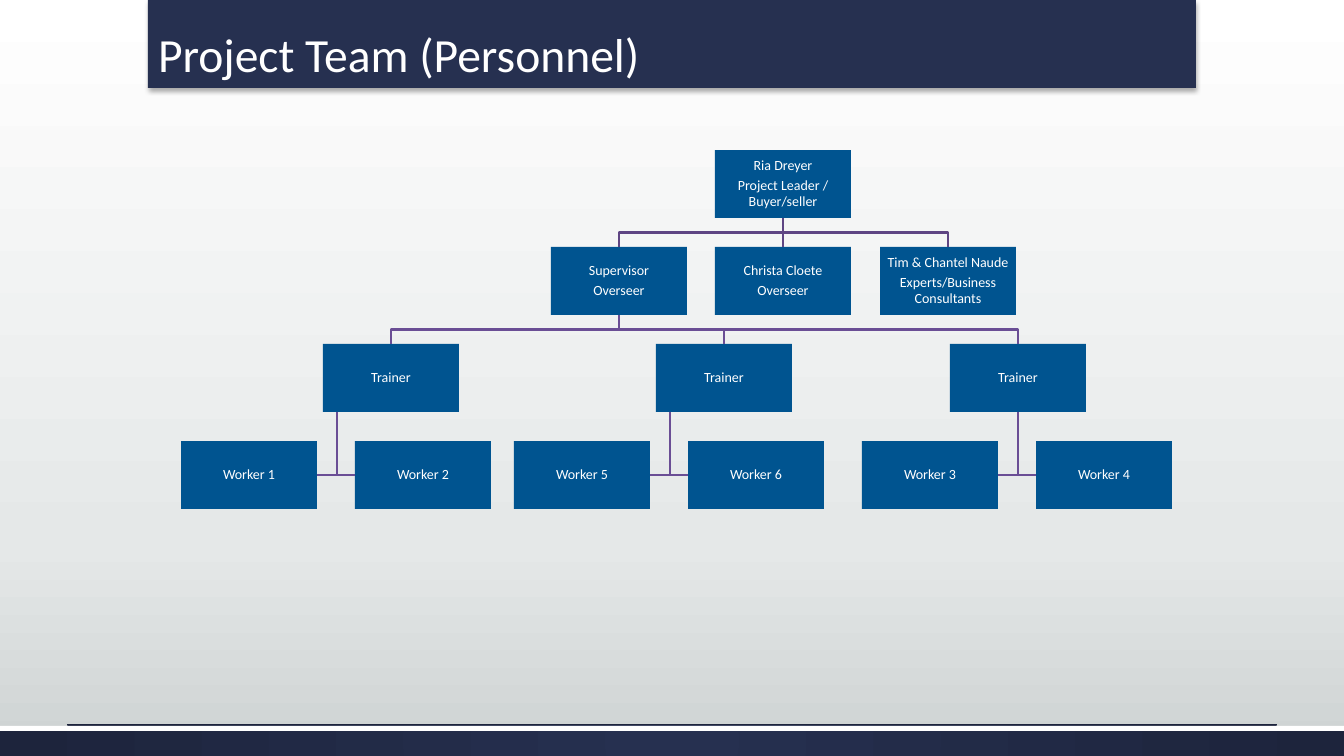
from pptx import Presentation
from pptx.dml.color import RGBColor
from pptx.enum.shapes import MSO_CONNECTOR, MSO_SHAPE
from pptx.enum.text import MSO_ANCHOR, MSO_AUTO_SIZE, PP_ALIGN
from pptx.oxml import parse_xml
from pptx.oxml.ns import nsdecls, qn
from pptx.util import Pt

SCALE = 12192000 / 1344
FONT = "Calibri"
WHITE = RGBColor(0xFF, 0xFF, 0xFF)
NAVY = RGBColor(0x26, 0x30, 0x50)
DEEP_NAVY = RGBColor(0x1D, 0x24, 0x3C)
MIST = RGBColor(0xE5, 0xE8, 0xE8)
GREY = RGBColor(0xCD, 0xD2, 0xD2)
BLUE = RGBColor(0x00, 0x54, 0x90)
PURPLE = RGBColor(0x5E, 0x45, 0x83)
LIGHT_PURPLE = RGBColor(0x6A, 0x4E, 0x95)

BOX_W, BOX_H, ROW_STEP = 136, 68, 97
MANAGERS = [
    (371, ["Supervisor", "Overseer"]),
    (535, ["Christa Cloete", "Overseer"]),
    (700, ["Tim & Chantel Naude", "Experts/Business Consultants"]),
]
TRAINERS = [
    (143, 157, ["Worker 1", "Worker 2"]),
    (476, 490, ["Worker 5", "Worker 6"]),
    (770, 838, ["Worker 3", "Worker 4"]),
]


def px(n):
    return round(n * SCALE)


def set_gradient(fill, parent, stops, direction):
    fill.gradient()
    gs = "".join(
        f'<a:gs pos="{pos * 1000}"><a:srgbClr val="{color}"/></a:gs>' for pos, color in stops
    )
    grad = parse_xml(
        f'<a:gradFill {nsdecls("a")} rotWithShape="1"><a:gsLst>{gs}</a:gsLst>{direction}</a:gradFill>'
    )
    old = parent.find(qn("a:gradFill"))
    parent.replace(old, grad)


def add_rect(s, x, y, w, h, color):
    sp = s.shapes.add_shape(MSO_SHAPE.RECTANGLE, px(x), px(y), px(w), px(h))
    sp.shadow.inherit = False
    sp.fill.solid()
    sp.fill.fore_color.rgb = color
    sp.line.fill.background()
    return sp


def add_straight(s, x1, y1, x2, y2, color, width):
    cx = s.shapes.add_connector(MSO_CONNECTOR.STRAIGHT, x1, y1, x2, y2)
    cx.line.color.rgb = color
    cx.line.width = Pt(width)
    cx._element.spPr.append(parse_xml(f'<a:effectLst {nsdecls("a")}/>'))
    return cx


def add_elbow(s, points, color):
    builder = s.shapes.build_freeform(*points[0], scale=1.0)
    builder.add_line_segments(points[1:], close=False)
    sp = builder.convert_to_shape()
    sp.shadow.inherit = False
    sp.fill.background()
    sp.line.color.rgb = color
    sp.line.width = Pt(2)


def add_background(s):
    fill = s.background.fill
    fill.gradient()
    set_gradient(
        fill,
        s.element.find(".//" + qn("p:bgPr")),
        [(0, WHITE), (72, MIST), (100, GREY)],
        '<a:lin ang="5400000" scaled="0"/>',
    )


def add_footer(s, x, y, w, h):
    band = add_rect(s, x, y, w, h, NAVY)
    set_gradient(
        band.fill,
        band._element.spPr,
        [(0, NAVY), (100, DEEP_NAVY)],
        '<a:path path="circle"><a:fillToRect l="50000" t="50000" r="50000" b="50000"/></a:path>',
    )
    add_rect(s, x, y, w, 5, WHITE)
    add_straight(s, px(x + 67), px(y - 1), px(x + w - 67), px(y - 1), DEEP_NAVY, 0.75)


def add_title(s, x, y, w, h):
    sp = s.shapes.title
    sp.left, sp.top, sp.width, sp.height = px(x), px(y), px(w), px(h)
    sp.fill.solid()
    sp.fill.fore_color.rgb = NAVY
    sp.line.fill.background()
    sp.shadow.inherit = False
    sp._element.spPr.find(qn("a:effectLst")).append(parse_xml(
        f'<a:outerShdw {nsdecls("a")} blurRad="44450" dist="27940" dir="5400000">'
        '<a:srgbClr val="000000"><a:alpha val="32000"/></a:srgbClr></a:outerShdw>'
    ))
    tf = sp.text_frame
    tf.text = "Project Team (Personnel)"
    tf.auto_size = MSO_AUTO_SIZE.NONE
    tf.vertical_anchor = MSO_ANCHOR.BOTTOM
    p = tf.paragraphs[0]
    p.alignment = PP_ALIGN.LEFT
    p.line_spacing = 0.9
    p.font.name, p.font.size, p.font.color.rgb = FONT, Pt(34), WHITE


def add_person(s, x, y, lines):
    sp = add_rect(s, x, y, BOX_W, BOX_H, BLUE)
    tf = sp.text_frame
    tf.text = "\n".join(lines)
    tf.word_wrap = True
    tf.vertical_anchor = MSO_ANCHOR.MIDDLE
    tf.margin_left = tf.margin_right = tf.margin_top = tf.margin_bottom = px(1)
    for p in tf.paragraphs:
        p.alignment = PP_ALIGN.CENTER
        p.line_spacing = 0.9
        p.space_after = Pt(3.5)
        p.font.name, p.font.size, p.font.color.rgb = FONT, Pt(10), WHITE
    return sp


def add_branch(s, parent, child, color):
    x1, y1 = parent.left + parent.width // 2, parent.top + parent.height
    x2, y2 = child.left + child.width // 2, child.top
    if x1 == x2:
        cx = add_straight(s, x1, y1, x2, y2, color, 2)
        cx.begin_connect(parent, 2)
        cx.end_connect(child, 0)
    else:
        middle = (y1 + y2) // 2
        add_elbow(s, [(x1, y1), (x1, middle), (x2, middle), (x2, y2)], color)


def add_org_chart(s, x, y):
    rows = [y + ROW_STEP * i for i in range(4)]
    leader = add_person(s, x + 535, rows[0], ["Ria Dreyer", "Project Leader / Buyer/seller"])
    managers = [add_person(s, x + dx, rows[1], lines) for dx, lines in MANAGERS]
    for manager in managers:
        add_branch(s, leader, manager, PURPLE)
    for dx, stem, workers in TRAINERS:
        trainer = add_person(s, x + dx, rows[2], ["Trainer"])
        add_branch(s, managers[0], trainer, LIGHT_PURPLE)
        stem_x = px(x + stem)
        stem_end = px(rows[3] + BOX_H / 2)
        for name, offset, edge in zip(workers, (-20 - BOX_W, 18), (-20, 18)):
            add_person(s, x + stem + offset, rows[3], [name])
            add_elbow(
                s,
                [(stem_x, trainer.top + trainer.height), (stem_x, stem_end),
                 (px(x + stem + edge), stem_end)],
                LIGHT_PURPLE,
            )


def main():
    prs = Presentation()
    prs.slide_width, prs.slide_height = px(1344), px(756)
    s = prs.slides.add_slide(prs.slide_layouts[5])
    add_background(s)
    add_footer(s, 0, 726, 1344, 30)
    add_title(s, 148, 0, 1048, 88)
    add_org_chart(s, 180, 150)
    prs.save("out.pptx")


if __name__ == "__main__":
    main()
